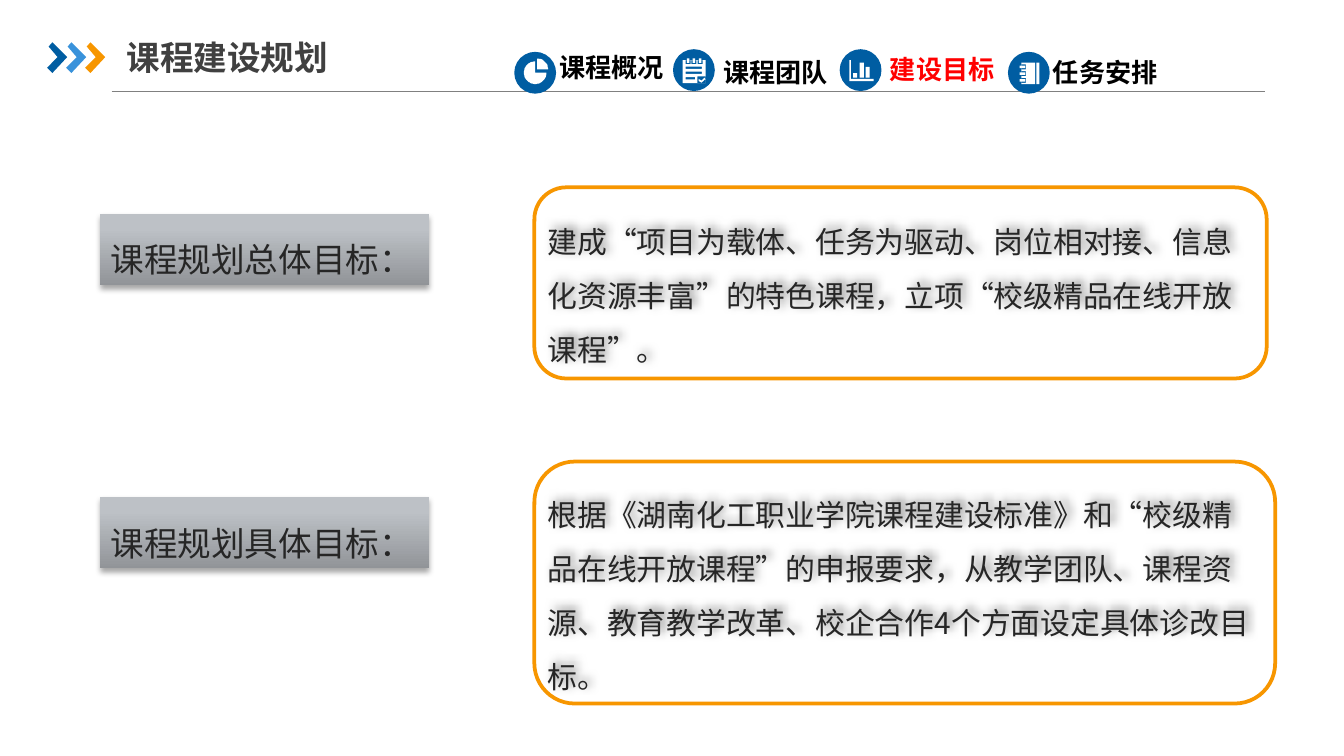
import copy
import math

import pptx
import pptx.dml.color
import pptx.enum.dml
import pptx.enum.shapes
import pptx.enum.text
import pptx.oxml
import pptx.oxml.ns
import pptx.util

Cm = pptx.util.Cm
RGB = pptx.dml.color.RGBColor
qn = pptx.oxml.ns.qn
Kind = pptx.enum.shapes.MSO_SHAPE
Align = pptx.enum.text.PP_ALIGN
Anchor = pptx.enum.text.MSO_ANCHOR
Fit = pptx.enum.text.MSO_AUTO_SIZE

BLUE = RGB(0x00, 0x5D, 0xA2)
SKY = RGB(0x39, 0x92, 0xDB)
ORANGE = RGB(0xF7, 0x96, 0x00)
WHITE = RGB(0xFF, 0xFF, 0xFF)
BLACK = RGB(0x00, 0x00, 0x00)
RED = RGB(0xFF, 0x00, 0x00)
GREY = RGB(0x80, 0x80, 0x80)
DARK = RGB(0x40, 0x40, 0x40)
INK = RGB(0x26, 0x26, 0x26)
STEEL = [(0, RGB(0x91, 0x94, 0x98)), (0.8, RGB(0xBD, 0xC1, 0xC6)), (1, RGB(0xBE, 0xC2, 0xC7))]
NOTO = "Noto Sans CJK SC"


def bar(x, y, w, h):
    return [(x, y), (x + w, y), (x + w, y + h), (x, y + h)]


def wedge(x, y, radius, start, end):
    turns = [math.radians(a) for a in range(start, end + 1, 6)]
    return [(x, y)] + [(x + radius * math.cos(t), y + radius * math.sin(t)) for t in turns]


CHEVRON = [[(3, 8), (10, 0), (38, 28), (10, 58), (0, 48), (20, 28)]]
PIE = [wedge(50, 50, 27, 0, 270), wedge(55, 42, 26, -90, 0)]
NOTE = [bar(23, 26, 55, 55),
        *[bar(x, 26, 12, 10) for x in (30, 44, 59)],
        *[bar(x + 3, 22, 6, 11) for x in (30, 44, 59)],
        *[bar(30, y, w, 5) for y, w in ((42, 39), (54, 39), (67, 23))],
        bar(58, 65, 20, 16),
        [(61, 71), (68, 75), (75, 68), (77, 72), (68, 80), (61, 76)]]
CHART = [bar(23, 26, 4, 45), bar(23, 71, 58, 5),
         *[bar(x, 68 - h, 10, h) for x, h in ((32, 11), (48, 36), (62, 26))]]
BOOK = [bar(32, 26, 33, 51), bar(68, 26, 7, 51),
        *[bar(32, y - 6, 11, 12) for y in (36, 52, 68)],
        *[bar(28, y - 3, 13, 6) for y in (36, 52, 68)]]


def place(slide, kind, box, fill=None, line=None):
    shape = slide.shapes.add_shape(kind, *[Cm(v) for v in box])
    shape.shadow.inherit = False
    if fill is None:
        shape.fill.background()
    else:
        shape.fill.solid()
        shape.fill.fore_color.rgb = fill
    if line is None:
        shape.line.fill.background()
    else:
        shape.line.color.rgb = line
        shape.line.width = pptx.util.Pt(2)
    return shape


def outline(slide, rings, x, y, unit, fill):
    pen = slide.shapes.build_freeform(*rings[0][0], scale=Cm(1) * unit)
    for i, ring in enumerate(rings):
        if i:
            pen.move_to(*ring[0])
        pen.add_line_segments(ring[1:], close=True)
    shape = pen.convert_to_shape(Cm(x), Cm(y))
    shape.shadow.inherit = False
    shape.fill.solid()
    shape.fill.fore_color.rgb = fill
    shape.line.fill.background()


def write(shape, text, size=16, color=INK, font=NOTO, bold=False, align=Align.LEFT,
          space=None, inset=(0.25, 0.13), anchor=Anchor.TOP, wrap=True, fit=Fit.SHAPE_TO_FIT_TEXT):
    frame = shape.text_frame
    frame.word_wrap = wrap
    frame.auto_size = fit
    frame.vertical_anchor = anchor
    frame.margin_left = frame.margin_right = Cm(inset[0])
    frame.margin_top = frame.margin_bottom = Cm(inset[1])
    para = frame.paragraphs[0]
    para.alignment = align
    para.line_spacing = space
    run = para.add_run()
    run.text = text
    run.font.size = pptx.util.Pt(size)
    run.font.bold = bold
    run.font.name = font
    run.font.color.rgb = color
    east = run.font._element.makeelement(qn("a:ea"), {"typeface": NOTO})
    run.font._element.find(qn("a:latin")).addnext(east)


def label(slide, box, text, **form):
    write(slide.shapes.add_textbox(*[Cm(v) for v in box]), text, **form)


def shade(shape, blur=3.1, shift=1.8, turn=90, alpha=35):
    shape.shadow.inherit = False
    effects = shape._element.spPr.find(qn("a:effectLst"))
    effects.append(pptx.oxml.parse_xml(
        '<a:outerShdw xmlns:a="http://schemas.openxmlformats.org/drawingml/2006/main"'
        f' blurRad="{pptx.util.Pt(blur)}" dist="{pptx.util.Pt(shift)}"'
        f' dir="{turn * 60000}" rotWithShape="0">'
        f'<a:srgbClr val="000000"><a:alpha val="{alpha * 1000}"/></a:srgbClr></a:outerShdw>'))


def header(slide, box):
    x, y, w, h = box
    rule = slide.shapes.add_connector(pptx.enum.shapes.MSO_CONNECTOR.STRAIGHT,
                                      Cm(x + 1.22), Cm(y + h), Cm(x + w), Cm(y + h))
    rule.line.color.rgb = GREY
    rule.line.width = pptx.util.Pt(0.75)
    props = rule._element.spPr
    props.append(props.makeelement(qn("a:effectLst"), {}))
    for i, color in enumerate((BLUE, SKY, ORANGE)):
        outline(slide, CHEVRON, x + 0.36 * i, y + 0.25, 0.01, color)
    label(slide, (x + 1.5, y, 5.16, 1.05), "课程建设规划", size=18, color=DARK, bold=True,
          inset=(0, 0.13), anchor=Anchor.MIDDLE, fit=Fit.NONE)


def topic(slide, box, text, icon, gap, drop, color=BLACK):
    x, y, w, h = box
    place(slide, Kind.OVAL, (x, y, h, h), BLUE)
    outline(slide, icon, x, y, h / 100, WHITE)
    label(slide, (x + gap, y + drop, w, 0.86), text, size=14, color=color,
          font="Calibri", bold=True, wrap=False)


def tag(slide, box, text):
    shape = place(slide, Kind.RECTANGLE, box)
    shape.fill.gradient()
    shape.fill.gradient_angle = 90
    stops = shape._element.spPr.find(".//" + qn("a:gsLst"))
    stops.append(copy.deepcopy(stops[-1]))
    for stop, (spot, color) in zip(shape.fill.gradient_stops, STEEL):
        stop.position = spot
        stop.color.rgb = color
    shade(shape)
    write(shape, text, size=18, align=Align.JUSTIFY, space=1.5, inset=(0.2, 0.1))


def card(slide, box, text, drop, high):
    x, y, w, h = box
    note = slide.shapes.add_textbox(Cm(x), Cm(y + drop), Cm(w), Cm(high))
    shade(note, blur=5, shift=3, turn=315, alpha=50)
    write(note, text, space=1.5)
    place(slide, Kind.ROUNDED_RECTANGLE, box, line=ORANGE)


def main():
    deck = pptx.Presentation()
    deck.slide_width, deck.slide_height = Cm(25.4), Cm(14.28)
    slide = deck.slides.add_slide(deck.slide_layouts[6])
    header(slide, (0.89, 0.55, 23.01, 1.18))
    tag(slide, (1.89, 4.04, 6.22, 1.35), "课程规划总体目标：")
    tag(slide, (1.89, 9.39, 6.22, 1.35), "课程规划具体目标：")
    card(slide, (10.1, 3.54, 13.84, 3.61),
         "建成“项目为载体、任务为驱动、岗位相对接、信息化资源丰富”的特色课程，"
         "立项“校级精品在线开放课程”。", 0.22, 3.33)
    card(slide, (10.1, 8.72, 14, 4.57),
         "根据《湖南化工职业学院课程建设标准》和“校级精品在线开放课程”的申报要求，"
         "从教学团队、课程资源、教育教学改革、校企合作4个方面设定具体诊改目标。", 0.2, 4.37)
    topic(slide, (9.72, 0.98, 2.51, 0.79), "课程概况", PIE, 0.6, -0.13)
    topic(slide, (12.72, 0.93, 2.51, 0.79), "课程团队", NOTE, 0.7, 0)
    topic(slide, (15.87, 0.93, 2.51, 0.79), "建设目标", CHART, 0.7, -0.05, RED)
    topic(slide, (19.05, 0.98, 2.51, 0.79), "任务安排", BOOK, 0.6, -0.05)
    deck.save("out.pptx")


if __name__ == "__main__":
    main()
